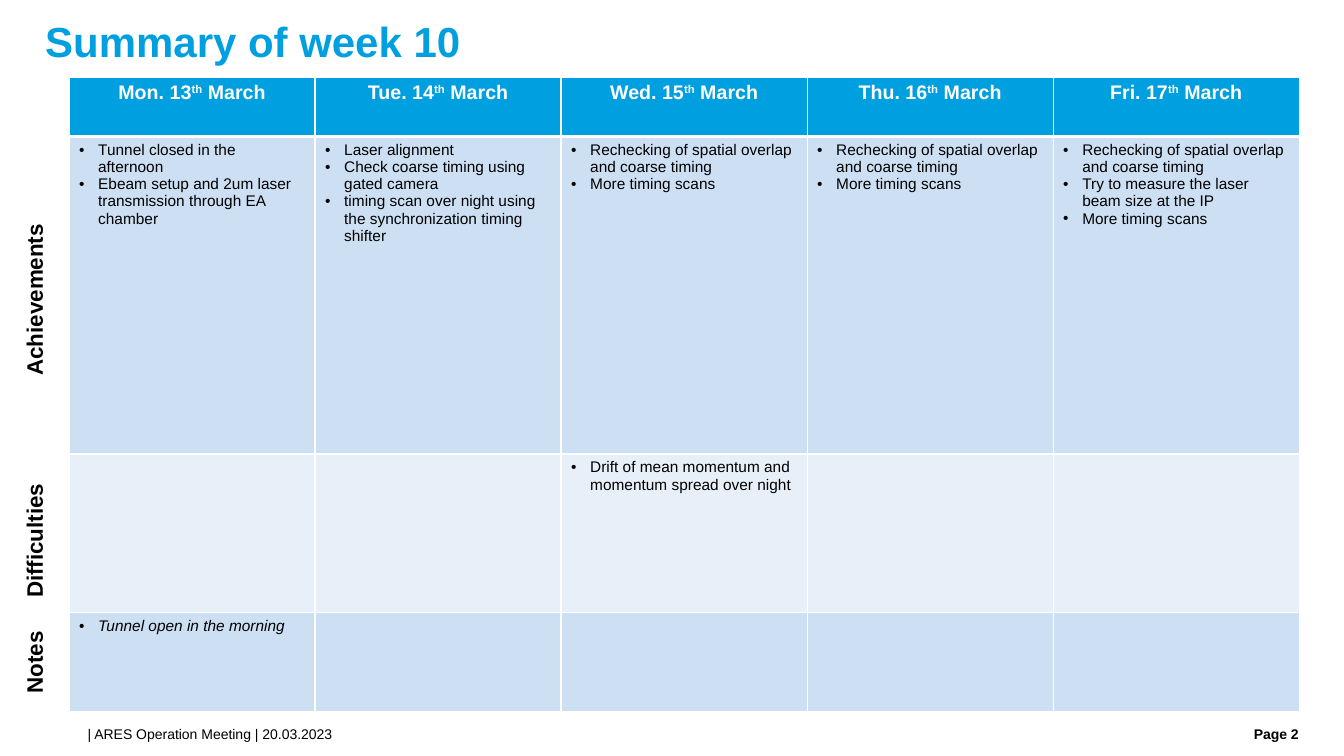
"""Build the weekly summary slide with its table of achievements, difficulties and notes."""
from dataclasses import dataclass

from pptx import Presentation
from pptx.dml.color import RGBColor
from pptx.enum.text import MSO_ANCHOR, MSO_AUTO_SIZE, PP_ALIGN
from pptx.oxml.ns import qn
from pptx.util import Cm, Pt
from lxml import etree

LEFT, CENTER, RIGHT = PP_ALIGN.LEFT, PP_ALIGN.CENTER, PP_ALIGN.RIGHT
TOP, MIDDLE = MSO_ANCHOR.TOP, MSO_ANCHOR.MIDDLE
NO_FIT = MSO_AUTO_SIZE.NONE


@dataclass(frozen=True)
class Theme:
    """Colours, font and type sizes."""
    font: str = "Arial"
    accent: str = "009FDF"
    band_dark: str = "CCDFF3"
    band_light: str = "E7F0F9"
    white: str = "FFFFFF"
    black: str = "000000"
    title: int = 30
    label: int = 16
    header: int = 14
    body: int = 11
    footer: int = 10
    rule: int = 1
    header_rule: int = 3


THEME = Theme()
DAYS = ["Mon", "Tue", "Wed", "Thu", "Fri"]
FIRST_DATE = 13
COL_WIDTH = 6.2
ROW_HEIGHTS = [1.5, 8, 4, 2.5]
OVERLAP = "Rechecking of spatial overlap and coarse timing"
SCANS = "More timing scans"
ACHIEVEMENTS = [
    ["Tunnel closed in the afternoon",
     "Ebeam setup and 2um laser transmission through EA chamber"],
    ["Laser alignment",
     "Check coarse timing using gated camera",
     "timing scan over night using the synchronization timing shifter"],
    [OVERLAP, SCANS],
    [OVERLAP, SCANS],
    [OVERLAP, "Try to measure the laser beam size at the IP", SCANS],
]
DIFFICULTIES = [[], [], ["Drift of mean momentum and momentum spread over night"], [], []]
NOTES = [["Tunnel open in the morning"], [], [], [], []]
ROW_LABELS = [("Achievements", 7.53, 4.37), ("Difficulties", 13.6, 3.43), ("Notes", 16.68, 2.08)]


def style_runs(p, size, color, bold=False, italic=False):
    """Format every run of a paragraph."""
    for r in p.runs:
        r.font.name = THEME.font
        r.font.size = Pt(size)
        r.font.bold = bold
        r.font.italic = italic
        r.font.color.rgb = RGBColor.from_string(color)


def clear_margins(tf):
    """Remove the inner margins of a text frame."""
    tf.margin_left = tf.margin_top = tf.margin_right = tf.margin_bottom = 0


def add_title(slide, text):
    """Place and format the title placeholder."""
    sp = slide.shapes.title
    sp.left, sp.top, sp.width, sp.height = Cm(1.14), Cm(0.48), Cm(31.6), Cm(1.24)
    tf = sp.text_frame
    tf.text = text
    tf.auto_size = NO_FIT
    tf.vertical_anchor = MIDDLE
    clear_margins(tf)
    p = tf.paragraphs[0]
    p.alignment, p.line_spacing = LEFT, 0.9
    style_runs(p, THEME.title, THEME.accent, bold=True)


def add_footer(slide, text, left, width, align=LEFT, bold=False):
    """Add one text of the footer line."""
    tf = slide.shapes.add_textbox(Cm(left), Cm(18.29), Cm(width), Cm(0.5)).text_frame
    tf.text = text
    tf.word_wrap = True
    tf.vertical_anchor = TOP
    clear_margins(tf)
    p = tf.paragraphs[0]
    p.alignment = align
    style_runs(p, THEME.footer, THEME.black, bold=bold)


def add_row_label(slide, text, center_y, length):
    """Add a label that reads upwards beside the table."""
    center_x, height = 0.86, 0.94
    sp = slide.shapes.add_textbox(Cm(center_x - length / 2), Cm(center_y - height / 2),
                                  Cm(length), Cm(height))
    sp.rotation = 270
    tf = sp.text_frame
    tf.text = text
    tf.word_wrap = False
    style_runs(tf.paragraphs[0], THEME.label, THEME.black, bold=True)


def paint_cell(cell, color, top=THEME.rule, bottom=THEME.rule):
    """Give a cell white borders and a fill."""
    tc_pr = cell._tc.get_or_add_tcPr()
    widths = {"a:lnL": THEME.rule, "a:lnR": THEME.rule, "a:lnT": top, "a:lnB": bottom}
    for tag, width in widths.items():
        ln = etree.SubElement(tc_pr, qn(tag), w=str(Pt(width)))
        fill = etree.SubElement(ln, qn("a:solidFill"))
        etree.SubElement(fill, qn("a:srgbClr"), val=THEME.white)
    cell.fill.solid()
    cell.fill.fore_color.rgb = RGBColor.from_string(color)


def fill_header(cell, day, date):
    """Write a date with a raised ordinal ending."""
    paint_cell(cell, THEME.accent, bottom=THEME.header_rule)
    p = cell.text_frame.paragraphs[0]
    p.alignment = CENTER
    for text in (f"{day}. {date}", "th", " March"):
        p.add_run().text = text
    style_runs(p, THEME.header, THEME.white, bold=True)
    p.runs[1].font._element.set("baseline", "30000")


def fill_list(cell, items, italic):
    """Write a bulleted list into a cell."""
    if not items:
        return
    tf = cell.text_frame
    tf.text = "\n".join(items)
    for p in tf.paragraphs:
        p_pr = p._p.get_or_add_pPr()
        p_pr.set("marL", str(Cm(0.48)))
        p_pr.set("indent", str(-Cm(0.48)))
        etree.SubElement(p_pr, qn("a:buFont"), typeface=THEME.font)
        etree.SubElement(p_pr, qn("a:buChar"), char="•")
        style_runs(p, THEME.body, THEME.black, italic=italic)


def add_week_table(slide):
    """Add the table with one column per day."""
    table = slide.shapes.add_table(len(ROW_HEIGHTS), len(DAYS), Cm(1.74), Cm(1.94),
                                   Cm(COL_WIDTH * len(DAYS)), Cm(sum(ROW_HEIGHTS))).table
    for column in table.columns:
        column.width = Cm(COL_WIDTH)
    for row, height in zip(table.rows, ROW_HEIGHTS):
        row.height = Cm(height)
    for col, day in enumerate(DAYS):
        fill_header(table.cell(0, col), day, FIRST_DATE + col)
    for row, entries in enumerate([ACHIEVEMENTS, DIFFICULTIES, NOTES], 1):
        color = THEME.band_dark if row % 2 else THEME.band_light
        top = THEME.header_rule if row == 1 else THEME.rule
        for col, items in enumerate(entries):
            cell = table.cell(row, col)
            paint_cell(cell, color, top=top)
            fill_list(cell, items, italic=entries is NOTES)


def main():
    """Build and save the slide."""
    prs = Presentation()
    prs.slide_width, prs.slide_height = Cm(33.87), Cm(19.05)
    slide = prs.slides.add_slide(prs.slide_layouts[5])
    add_title(slide, "Summary of week 10")
    add_footer(slide, "| ARES Operation Meeting | 20.03.2023", 2.21, 27.64)
    add_footer(slide, "Page 2", 30.14, 2.59, align=RIGHT, bold=True)
    add_week_table(slide)
    for text, center_y, length in ROW_LABELS:
        add_row_label(slide, text, center_y, length)
    prs.save("out.pptx")


if __name__ == "__main__":
    main()
